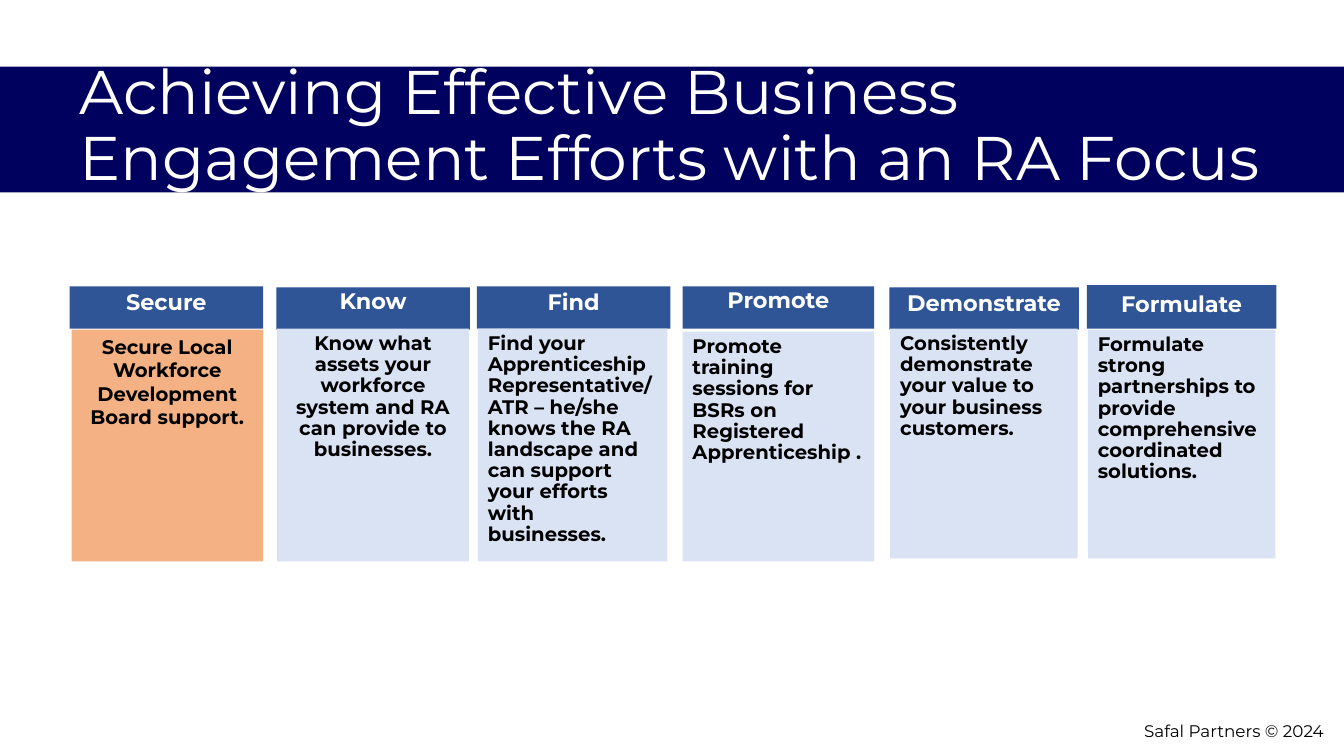
from pptx import Presentation
from pptx.dml.color import RGBColor
from pptx.enum.shapes import MSO_SHAPE
from pptx.enum.text import MSO_ANCHOR, PP_ALIGN
from pptx.util import Inches, Pt

COLORS = {
    "navy": "00015E",
    "blue": "2F5597",
    "pale": "DAE3F3",
    "orange": "F4B183",
    "white": "FFFFFF",
    "black": "000000",
}
FONT = "Montserrat"
LEFT, CENTER, RIGHT = PP_ALIGN.LEFT, PP_ALIGN.CENTER, PP_ALIGN.RIGHT

# Each step: heading, (box, line spacing), text, (box, line spacing), alignment, fill
STEPS = [
    ("Secure", ((0.69, 2.84, 1.92, 0.42), 0.9),
     "Secure Local Workforce Development Board support.",
     ((0.71, 3.27, 1.9, 2.3), 1.0), CENTER, "orange"),
    ("Know", ((2.74, 2.85, 1.92, 0.42), 0.8),
     "Know what assets your workforce system and RA can provide to businesses.",
     ((2.75, 3.26, 1.9, 2.31), 0.9), CENTER, "pale"),
    ("Find", ((4.73, 2.84, 1.92, 0.42), 0.9),
     "Find your Apprenticeship Representative/ATR – he/she knows the RA "
     "landscape and can support your efforts with businesses. ",
     ((4.74, 3.26, 1.88, 2.31), 0.9), LEFT, "pale"),
    ("Promote", ((6.77, 2.84, 1.9, 0.42), 0.8),
     "Promote training sessions for BSRs on Registered Apprenticeship .",
     ((6.77, 3.29, 1.9, 2.28), 0.9), LEFT, "pale"),
    ("Demonstrate", ((8.82, 2.85, 1.88, 0.42), 0.9),
     "Consistently demonstrate your value to your business customers.",
     ((8.83, 3.26, 1.86, 2.28), 0.9), LEFT, "pale"),
    ("Formulate", ((10.78, 2.83, 1.88, 0.43), 1.0),
     "Formulate strong partnerships to provide comprehensive coordinated solutions.",
     ((10.79, 3.27, 1.86, 2.27), 0.9), LEFT, "pale"),
]


def rgb(color):
    return RGBColor.from_string(COLORS[color])


def set_all(target, values):
    for name, value in values.items():
        setattr(target, name, value)


def write(frame, text, size, color, align=LEFT, spacing=1.0, bold=False,
          anchor=MSO_ANCHOR.TOP):
    set_all(frame, {"word_wrap": True, "vertical_anchor": anchor})
    paragraph = frame.paragraphs[0]
    set_all(paragraph, {"alignment": align, "line_spacing": spacing})
    run = paragraph.add_run()
    run.text = text
    set_all(run.font, {"name": FONT, "size": Pt(size), "bold": bold})
    run.font.color.rgb = rgb(color)


def add_panel(slide, box, fill):
    panel = slide.shapes.add_shape(MSO_SHAPE.RECTANGLE, *map(Inches, box))
    panel.shadow.inherit = False
    panel.fill.solid()
    panel.fill.fore_color.rgb = rgb(fill)
    panel.line.fill.background()
    return panel.text_frame


def add_label(slide, box, text, size, color, **layout):
    label = slide.shapes.add_textbox(*map(Inches, box))
    write(label.text_frame, text, size, color, **layout)


def add_step(slide, heading, heading_place, text, text_place, align, fill):
    heading_box, heading_spacing = heading_place
    text_box, text_spacing = text_place
    write(add_panel(slide, heading_box, "blue"), heading, 16, "white",
          CENTER, heading_spacing, bold=True)
    write(add_panel(slide, text_box, fill), text, 14, "black",
          align, text_spacing, bold=True)


def main():
    deck = Presentation()
    set_all(deck, {"slide_width": Inches(13.33), "slide_height": Inches(7.5)})
    slide = deck.slides.add_slide(deck.slide_layouts[6])

    # Title band and footer
    add_panel(slide, (0, 0.66, 13.33, 1.25), "navy")
    add_label(slide, (9.6, 7.1, 3.63, 0.4), "Safal Partners © 2024", 12,
              "black", align=RIGHT)
    add_label(slide, (0.69, 0.54, 12.88, 1.45),
              "Achieving Effective Business Engagement Efforts with an RA Focus",
              44, "white", spacing=0.9, anchor=MSO_ANCHOR.MIDDLE)

    # Six steps
    for step in STEPS:
        add_step(slide, *step)

    deck.save("out.pptx")


if __name__ == "__main__":
    main()
